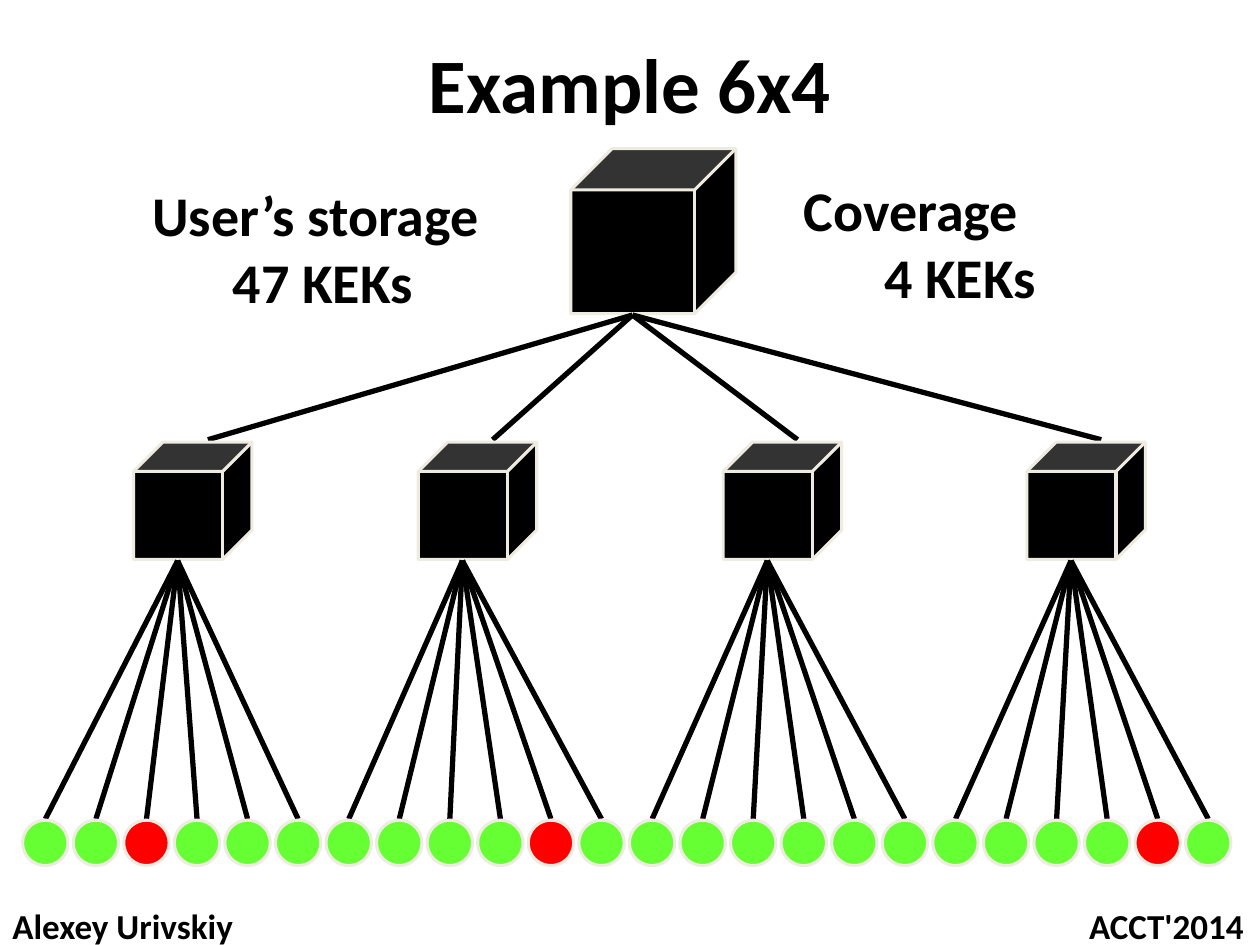
from pptx import Presentation
from pptx.dml.color import RGBColor
from pptx.enum.shapes import MSO_CONNECTOR, MSO_SHAPE
from pptx.enum.text import MSO_ANCHOR, PP_ALIGN
from pptx.oxml.ns import qn
from pptx.util import Inches, Pt
from lxml.etree import SubElement

BLACK, CREAM, GREEN, RED = "000000", "EEECE1", "66FF33", "FF0000"


def rgb(value):
    return RGBColor.from_string(value)


class TreeSlide:
    font = "Calibri"

    def __init__(self, prs):
        self.s = prs.slides.add_slide(prs.slide_layouts[5])

    def style(self, p, size, align):
        p.alignment = align
        p.font.name = self.font
        p.font.size = Pt(size)
        p.font.bold = True
        p.font.color.rgb = rgb(BLACK)

    def title(self, text, x, y, w, h):
        sp = self.s.shapes.title
        sp.left, sp.top, sp.width, sp.height = map(Inches, (x, y, w, h))
        tf = sp.text_frame
        tf.text = text
        tf.vertical_anchor = MSO_ANCHOR.MIDDLE
        self.style(tf.paragraphs[0], 44, PP_ALIGN.CENTER)

    def text(self, text, x, y, w, h, size, align=PP_ALIGN.LEFT, hanging=0):
        sp = self.s.shapes.add_textbox(*map(Inches, (x, y, w, h)))
        tf = sp.text_frame
        tf.word_wrap = True
        p = tf.paragraphs[0]
        p.text = text
        self.style(p, size, align)
        if hanging:
            pPr = p._p.get_or_add_pPr()
            pPr.set("marL", str(Inches(hanging)))
            pPr.set("indent", str(Inches(-hanging)))

    def shape(self, kind, x, y, w, h, fill):
        sp = self.s.shapes.add_shape(kind, *map(Inches, (x, y, w, h)))
        sp.shadow.inherit = False
        sp.fill.solid()
        sp.fill.fore_color.rgb = rgb(fill)
        sp.line.color.rgb = rgb(CREAM)
        sp.line.width = Pt(1.75)

    def line(self, x1, y1, x2, y2):
        c = self.s.shapes.add_connector(
            MSO_CONNECTOR.STRAIGHT, *map(Inches, (x1, y1, x2, y2)))
        c.line.color.rgb = rgb(BLACK)
        c.line.width = Pt(3)
        SubElement(c._element.spPr, qn("a:effectLst"))


def main():
    prs = Presentation()
    prs.slide_width, prs.slide_height = Inches(10), Inches(7.5)
    slide = TreeSlide(prs)
    slide.title("Example 6x4", 0, 0.25, 10, 0.82)
    slide.text("User’s storage\v47 KEKs", 1.11, 1.38, 3.74, 1.18, 32, hanging=0.64)
    slide.text("Coverage\v4 KEKs", 6.28, 1.34, 3.74, 1.18, 32, hanging=0.64)

    root_x, root_bottom = 5.02, 2.5
    node_lefts = [1.06, 3.32, 5.74, 8.15]
    leaves_per_node = 6
    leaf_count = leaves_per_node * len(node_lefts)
    first_leaf, last_leaf, leaf_size = 0.18, 9.41, 0.36
    leaf_step = (last_leaf - first_leaf) / (leaf_count - 1)
    revoked = {2, 10, 22}

    slide.shape(MSO_SHAPE.CUBE, 4.53, 1.18, 1.31, 1.31, BLACK)
    for node_left in node_lefts:
        slide.line(root_x, root_bottom, node_left + 0.59, 3.49)
        slide.shape(MSO_SHAPE.CUBE, node_left, 3.51, 0.94, 0.93, BLACK)

    for i in range(leaf_count):
        left = first_leaf + i * leaf_step
        node_x = node_lefts[i // leaves_per_node] + 0.35
        slide.line(node_x, 4.45, left + leaf_size / 2, 6.5)
        slide.shape(MSO_SHAPE.OVAL, left, 6.51, leaf_size, leaf_size,
                    RED if i in revoked else GREEN)

    slide.text("Alexey Urivskiy", 0, 7.13, 5, 0.4, 20)
    slide.text("ACCT'2014", 5, 7.13, 4.97, 0.4, 20, PP_ALIGN.RIGHT)
    prs.save("out.pptx")


if __name__ == "__main__":
    main()
